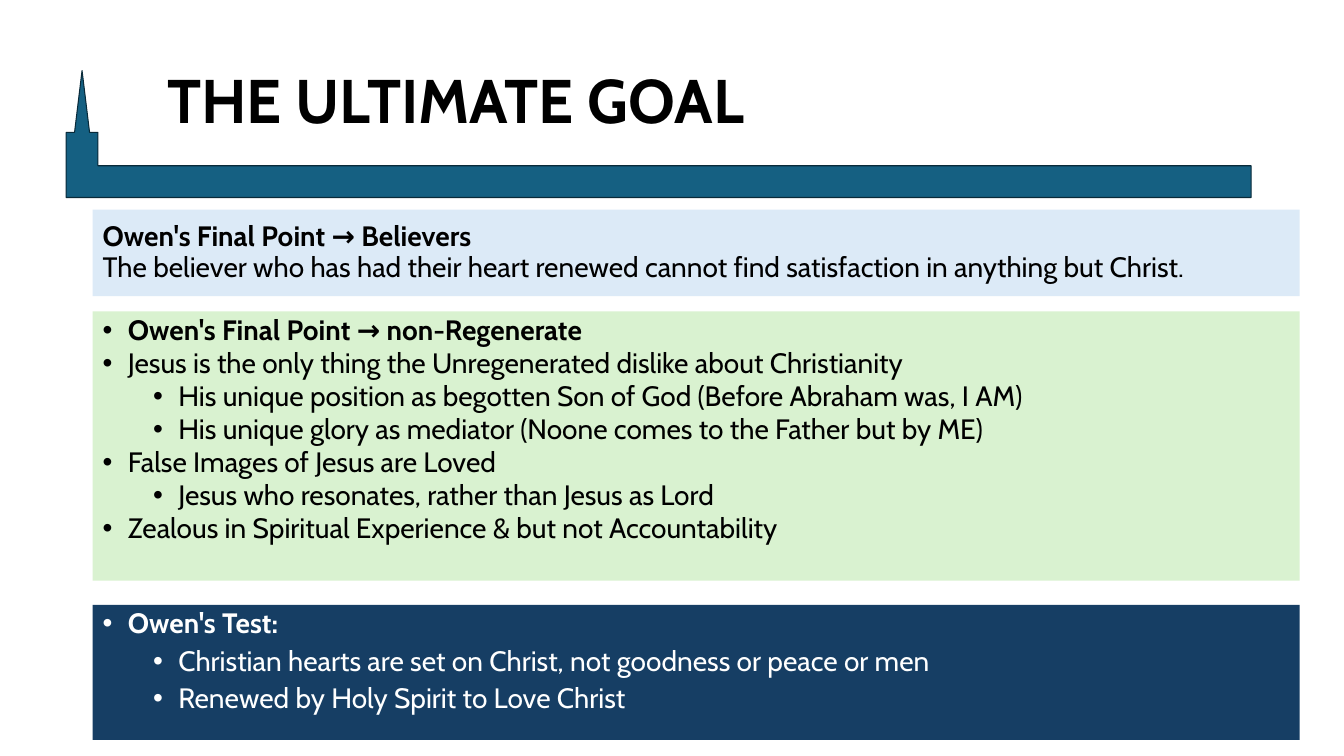
from dataclasses import dataclass

import lxml.etree
import pptx
import pptx.dml.color
import pptx.enum.shapes
import pptx.enum.text
import pptx.oxml.ns
import pptx.util

Inches = pptx.util.Inches
Pt = pptx.util.Pt
ANCHOR = pptx.enum.text.MSO_ANCHOR
SHAPE = pptx.enum.shapes.MSO_SHAPE

FONT = "Cabin"
PANEL_LEFT, PANEL_WIDTH = 0.92, 11.97
BULLET_HANG = 0.25
LEVEL_STEP = 0.5


@dataclass
class Point:
    text: str
    level: int = 0
    bold: bool = False


@dataclass
class Panel:
    top: float
    height: float
    fill: str
    text_color: str
    points: list[Point]
    space_before: float


def rgb(value: str) -> pptx.dml.color.RGBColor:
    return pptx.dml.color.RGBColor.from_string(value)


def style(paragraph, size: float, color: str, bold: bool | None = None) -> None:
    paragraph.alignment = pptx.enum.text.PP_ALIGN.LEFT
    paragraph.line_spacing = 0.9
    paragraph.font.name = FONT
    paragraph.font.size = Pt(size)
    paragraph.font.color.rgb = rgb(color)
    paragraph.font.bold = bold


def add_bullet(paragraph, level: int) -> None:
    paragraph.level = level
    properties = paragraph._p.get_or_add_pPr()
    properties.set("marL", str(Inches(BULLET_HANG + level * LEVEL_STEP)))
    properties.set("indent", str(-Inches(BULLET_HANG)))
    for tag, attribute, value in (("a:buFont", "typeface", "Arial"),
                                  ("a:buChar", "char", "•")):
        element = lxml.etree.SubElement(properties, pptx.oxml.ns.qn(tag))
        element.set(attribute, value)


def add_panel(slide, top: float, height: float, fill: str, anchor):
    panel = slide.shapes.add_shape(
        SHAPE.RECTANGLE, Inches(PANEL_LEFT), Inches(top),
        Inches(PANEL_WIDTH), Inches(height))
    panel.shadow.inherit = False
    panel.fill.solid()
    panel.fill.fore_color.rgb = rgb(fill)
    panel.line.fill.background()
    panel.text_frame.word_wrap = True
    panel.text_frame.vertical_anchor = anchor
    return panel.text_frame


def add_bullet_panel(slide, panel: Panel) -> None:
    frame = add_panel(slide, panel.top, panel.height, panel.fill, ANCHOR.TOP)
    for index, point in enumerate(panel.points):
        paragraph = frame.add_paragraph() if index else frame.paragraphs[0]
        paragraph.text = point.text
        add_bullet(paragraph, point.level)
        style(paragraph, 20, panel.text_color, point.bold)
        if index:
            paragraph.space_before = Pt(panel.space_before)


BULLET_PANELS = [
    Panel(3.09, 2.67, "D9F2D0", "000000", [
        Point("Owen's Final Point → non-Regenerate", bold=True),
        Point("Jesus is the only thing the Unregenerated dislike about Christianity"),
        Point("His unique position as begotten Son of God (Before Abraham was, I AM)", 1),
        Point("His unique glory as mediator (Noone comes to the Father but by ME)", 1),
        Point("False Images of Jesus are Loved"),
        Point("Jesus who resonates, rather than Jesus as Lord", 1),
        Point("Zealous in Spiritual Experience & but not Accountability"),
    ], space_before=2),
    Panel(6, 1.34, "163E64", "FFFFFF", [
        Point("Owen's Test:", bold=True),
        Point("Christian hearts are set on Christ, not goodness or peace or men", 1),
        Point("Renewed by Holy Spirit to Love Christ", 1),
    ], space_before=5),
]


def main() -> None:
    deck = pptx.Presentation()
    deck.slide_width, deck.slide_height = Inches(13.33), Inches(7.5)
    slide = deck.slides.add_slide(deck.slide_layouts[6])

    # Steeple and bar under the title
    steeple = slide.shapes.add_shape(
        SHAPE.BENT_UP_ARROW, Inches(0.74), Inches(0.7), Inches(11.67), Inches(1.26))
    for index, ratio in enumerate((0.25, 0.059, 0.487)):
        steeple.adjustments[index] = ratio
    steeple._element.spPr.xfrm.set("flipH", "1")
    steeple.shadow.inherit = False
    steeple.fill.solid()
    steeple.fill.fore_color.rgb = rgb("156082")
    steeple.line.color.rgb = rgb("092A39")
    steeple.line.width = Pt(0.75)

    # Title
    title = slide.shapes.add_textbox(
        Inches(1.56), Inches(0.4), Inches(10.86), Inches(1.26)).text_frame
    title.word_wrap = True
    title.vertical_anchor = ANCHOR.MIDDLE
    title.paragraphs[0].text = "THE ULTIMATE GOAL"
    style(title.paragraphs[0], 44, "000000", bold=True)

    # Believers: bold heading and statement in one paragraph
    believers = add_panel(slide, 2.08, 0.86, "DCEAF7", ANCHOR.MIDDLE).paragraphs[0]
    heading = believers.add_run()
    heading.text = "Owen's Final Point → Believers"
    heading.font.bold = True
    believers.add_line_break()
    believers.add_run().text = (
        "The believer who has had their heart renewed cannot find "
        "satisfaction in anything but Christ.")
    style(believers, 20, "000000")

    # Non-regenerate and test panels
    for panel in BULLET_PANELS:
        add_bullet_panel(slide, panel)

    deck.save("out.pptx")


if __name__ == "__main__":
    main()
